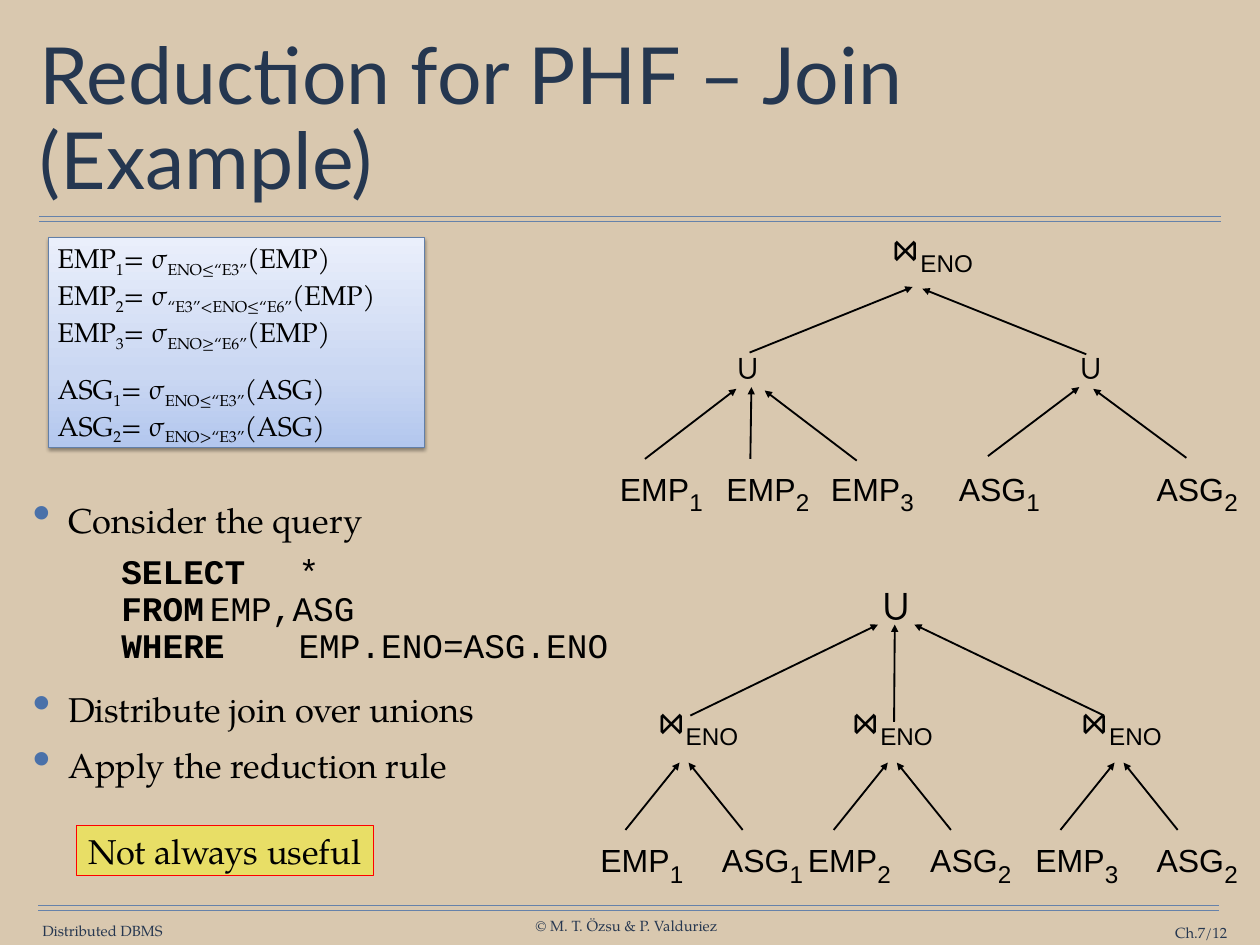
from lxml import etree
from pptx import Presentation
from pptx.dml.color import RGBColor
from pptx.enum.shapes import MSO_CONNECTOR, MSO_SHAPE
from pptx.enum.text import MSO_ANCHOR, MSO_AUTO_SIZE, PP_ALIGN
from pptx.oxml import parse_xml
from pptx.oxml.ns import nsdecls, qn
from pptx.util import Cm, Pt

STRAIGHT = MSO_CONNECTOR.STRAIGHT
RECTANGLE = MSO_SHAPE.RECTANGLE
TOP, MIDDLE = MSO_ANCHOR.TOP, MSO_ANCHOR.MIDDLE
GROW = MSO_AUTO_SIZE.SHAPE_TO_FIT_TEXT
LEFT, CENTER, RIGHT = PP_ALIGN.LEFT, PP_ALIGN.CENTER, PP_ALIGN.RIGHT

SERIF, SANS, MONO, HEADING = "TeX Gyre Pagella", "Arial", "Courier New", "Lato"
COLORS = {
    "background": "D9C8AF", "title": "253750", "footer": "263750",
    "rule": "6682AA", "ink": "000000", "bullet": "4A71A9",
    "panel_line": "627FA8", "note": "FFFF00", "note_line": "FF0000",
}
PANEL_STOPS = [(0, "B3C7EE"), (35, "CAD7F2"), (100, "EAEFFB")]

TITLE = "Reduction for PHF – Join (Example)"
FOOTERS = [
    ("Distributed DBMS", 0.99, 26.44, 3.9, CENTER),
    ("© M. T. Özsu & P. Valduriez", 15.16, 26.29, 5.6, CENTER),
    ("Ch.7/12", 31.27, 26.49, 3.91, RIGHT),
]
RULES = [(1.12, 35.0, 6.2), (1.12, 35.0, 6.35), (1.09, 34.95, 25.96), (1.09, 34.95, 26.11)]
FRAGMENTS = [
    ["EMP|1|= σ|ENO≤“E3”|(EMP)", "EMP|2|= σ|“E3”<ENO≤“E6”|(EMP)", "EMP|3|= σ|ENO≥“E6”|(EMP)"],
    ["ASG|1|= σ|ENO≤“E3”|(ASG)", "ASG|2|= σ|ENO>“E3”|(ASG)"],
]
QUERY = [("SELECT", "*"), ("FROM", "EMP,ASG"), ("WHERE", "EMP.ENO=ASG.ENO")]
POINTS = ["Consider the query", QUERY, "Distribute join over unions", "Apply the reduction rule"]
NOTE = "Not always useful"

RELATION_ROWS = [
    (13.18, [("EMP|1", 18.96), ("EMP|2", 22.01), ("EMP|3", 25.01),
             ("ASG|1", 28.65), ("ASG|2", 34.32)]),
    (23.83, [("EMP|1", 18.4), ("ASG|1", 21.86), ("EMP|2", 24.35),
             ("ASG|2", 27.83), ("EMP|3", 30.87), ("ASG|2", 34.32)]),
]
JOINS = [(26.73, 6.86), (20.0, 20.42), (25.58, 20.42), (32.14, 20.42)]
UNIONS = [(21.44, 9.88, 1.22, 28, 34.1), (31.27, 9.88, 1.22, 28, 34.1),
          (25.62, 16.61, 1.47, 36, 41.2)]
ARROWS = [
    (21.51, 13.16, 21.54, 11.1), (18.49, 13.16, 21.11, 11.15),
    (24.56, 13.21, 21.92, 11.2), (28.32, 13.08, 30.94, 11.1),
    (34.01, 13.13, 31.34, 11.15), (21.49, 10.11, 26.16, 8.23),
    (31.14, 10.16, 26.44, 8.28), (19.79, 20.52, 25.17, 17.91),
    (31.65, 20.52, 26.21, 17.91), (25.63, 20.7, 25.65, 17.91),
]
JOIN_PAIR_CENTERS = [19.61, 25.58, 32.08]


def color(name):
    return RGBColor.from_string(COLORS[name])


def set_font(font, name, size, ink="ink"):
    font.name, font.size = name, Pt(size)
    font.color.rgb = color(ink)


def add_box(page, left, top, width, height, inset=0, wrap=True, anchor=TOP):
    box = page.shapes.add_textbox(Cm(left), Cm(top), Cm(width), Cm(height))
    frame = box.text_frame
    frame.word_wrap, frame.vertical_anchor = wrap, anchor
    frame.margin_left = frame.margin_right = Cm(inset)
    frame.margin_top = frame.margin_bottom = Cm(inset)
    return frame


def add_spans(para, marked, sub_size=None):
    for index, text in enumerate(marked.split("|")):
        span = para.add_run()
        span.text = text
        if index % 2:
            span.font._element.set("baseline", "-25000")
            if sub_size:
                span.font.size = Pt(sub_size)


def add_node(page, marked, center, top, width, height, size, spacing=None):
    frame = add_box(page, center - width / 2, top, width, height, wrap=False)
    frame.auto_size = GROW
    para = frame.paragraphs[0]
    para.alignment = CENTER
    if spacing:
        para.line_spacing = Pt(spacing)
    add_spans(para, marked, 34)
    set_font(para.font, SANS, size)
    return para


def add_line(page, x1, y1, x2, y2, ink, width, arrow=False):
    line = page.shapes.add_connector(STRAIGHT, Cm(x1), Cm(y1), Cm(x2), Cm(y2))
    line.line.color.rgb = color(ink)
    line.line.width = Pt(width)
    if arrow:
        etree.SubElement(line.line._get_or_add_ln(), qn("a:tailEnd"), type="triangle")
    etree.SubElement(line._element.spPr, qn("a:effectLst"))


def add_panel(page, left, top, width, height, edge):
    panel = page.shapes.add_shape(RECTANGLE, Cm(left), Cm(top), Cm(width), Cm(height))
    panel.shadow.inherit = False
    panel.line.color.rgb = color(edge)
    panel.line.width = Pt(0.75)
    return panel


def add_fragments(page):
    panel = add_panel(page, 1.4, 6.81, 10.77, 6.02, "panel_line")
    stops = "".join(f'<a:gs pos="{pos * 1000}"><a:srgbClr val="{tint}"/></a:gs>'
                    for pos, tint in PANEL_STOPS)
    gradient = parse_xml(f'<a:gradFill {nsdecls("a")} rotWithShape="1"><a:gsLst>{stops}</a:gsLst>'
                         '<a:lin ang="16200000" scaled="0"/></a:gradFill>')
    properties = panel._element.spPr
    properties.find(qn("a:prstGeom")).addnext(gradient)
    properties.find(qn("a:effectLst")).append(parse_xml(
        f'<a:outerShdw {nsdecls("a")} blurRad="{Pt(3.1)}" dist="{Pt(1.6)}" dir="5400000" '
        'rotWithShape="0"><a:srgbClr val="000000"><a:alpha val="38000"/></a:srgbClr></a:outerShdw>'))
    frame = panel.text_frame
    frame.word_wrap, frame.vertical_anchor = True, TOP
    for index, lines in enumerate(FRAGMENTS):
        para = frame.add_paragraph() if index else frame.paragraphs[0]
        para.alignment = LEFT
        if index:
            para.space_before = Pt(16)
        for row, marked in enumerate(lines):
            if row:
                para.add_line_break()
            add_spans(para, marked)
        set_font(para.font, SERIF, 22)


def add_bullet(para):
    properties = para._p.get_or_add_pPr()
    properties.set("marL", str(Cm(1.02)))
    properties.set("indent", str(Cm(-1.02)))
    tint = etree.SubElement(properties, qn("a:buClr"))
    etree.SubElement(tint, qn("a:srgbClr"), val=COLORS["bullet"])
    etree.SubElement(properties, qn("a:buSzPct"), val="150000")
    etree.SubElement(properties, qn("a:buChar"), char="•")


def add_query(para):
    tabs = etree.SubElement(para._p.get_or_add_pPr(), qn("a:tabLst"))
    for stop in (1, 2, 3):
        etree.SubElement(tabs, qn("a:tab"), pos=str(Cm(2.54 * stop)), algn="l")
    para.line_spacing, para.space_after = 0.9, Pt(5.7)
    for row, (keyword, value) in enumerate(QUERY):
        if row:
            para.add_line_break()
        for text, bold in ((f"\t{keyword}\t", True), (value, False)):
            span = para.add_run()
            span.text, span.font.bold = text, bold


def add_points(page):
    frame = add_box(page, 0.79, 14.15, 17.3, 10.21, inset=0.15)
    for index, point in enumerate(POINTS):
        para = frame.add_paragraph() if index else frame.paragraphs[0]
        if point is QUERY:
            add_query(para)
        else:
            add_bullet(para)
            para.add_run().text = point
        if index:
            para.space_before = Pt(12)
        set_font(para.font, MONO if point is QUERY else SERIF, 28)


def add_note(page):
    panel = add_panel(page, 2.18, 23.67, 8.53, 1.45, "note_line")
    panel.fill.solid()
    panel.fill.fore_color.rgb = color("note")
    tint = panel._element.spPr.find(qn("a:solidFill"))[0]
    etree.SubElement(tint, qn("a:alpha"), val="41000")
    frame = panel.text_frame
    frame.word_wrap, frame.vertical_anchor = False, TOP
    para = frame.paragraphs[0]
    para.alignment = CENTER
    para.add_run().text = NOTE
    set_font(para.font, SERIF, 28)


def add_trees(page):
    for center, top, height, size, spacing in UNIONS:
        add_node(page, "∪", center, top, 0.76, height, size, spacing)
    for top, relations in RELATION_ROWS:
        for marked, center in relations:
            add_node(page, marked, center, top, 2.46, 1.12, 26)
    for center, top in JOINS:
        para = add_node(page, "⋈|ENO", center, top, 3.12, 1.19, 36, 31.3)
        para.runs[0].font.name = SERIF
    pairs = [(center + side * 1.68, 23.8, center + side * 0.13, 21.87)
             for center in JOIN_PAIR_CENTERS for side in (-1, 1)]
    for ends in ARROWS + pairs:
        add_line(page, *ends, "ink", 1.5, arrow=True)


def main():
    deck = Presentation()
    deck.slide_width, deck.slide_height = Cm(36.12), Cm(27.1)
    page = deck.slides.add_slide(deck.slide_layouts[6])
    page.background.fill.solid()
    page.background.fill.fore_color.rgb = color("background")
    for x1, x2, y in RULES:
        add_line(page, x1, y, x2, y, "rule", 1)
    for text, left, top, width, alignment in FOOTERS:
        para = add_box(page, left, top, width, 0.51, anchor=MIDDLE).paragraphs[0]
        para.alignment = alignment
        para.add_run().text = text
        set_font(para.font, SERIF, 12, "footer")
    title = add_box(page, 0.99, 1.24, 34.14, 4.47, inset=0.15, anchor=MIDDLE).paragraphs[0]
    title.line_spacing = 0.9
    title.add_run().text = TITLE
    set_font(title.font, HEADING, 64, "title")
    add_points(page)
    add_trees(page)
    add_fragments(page)
    add_note(page)
    deck.save("out.pptx")


if __name__ == "__main__":
    main()
